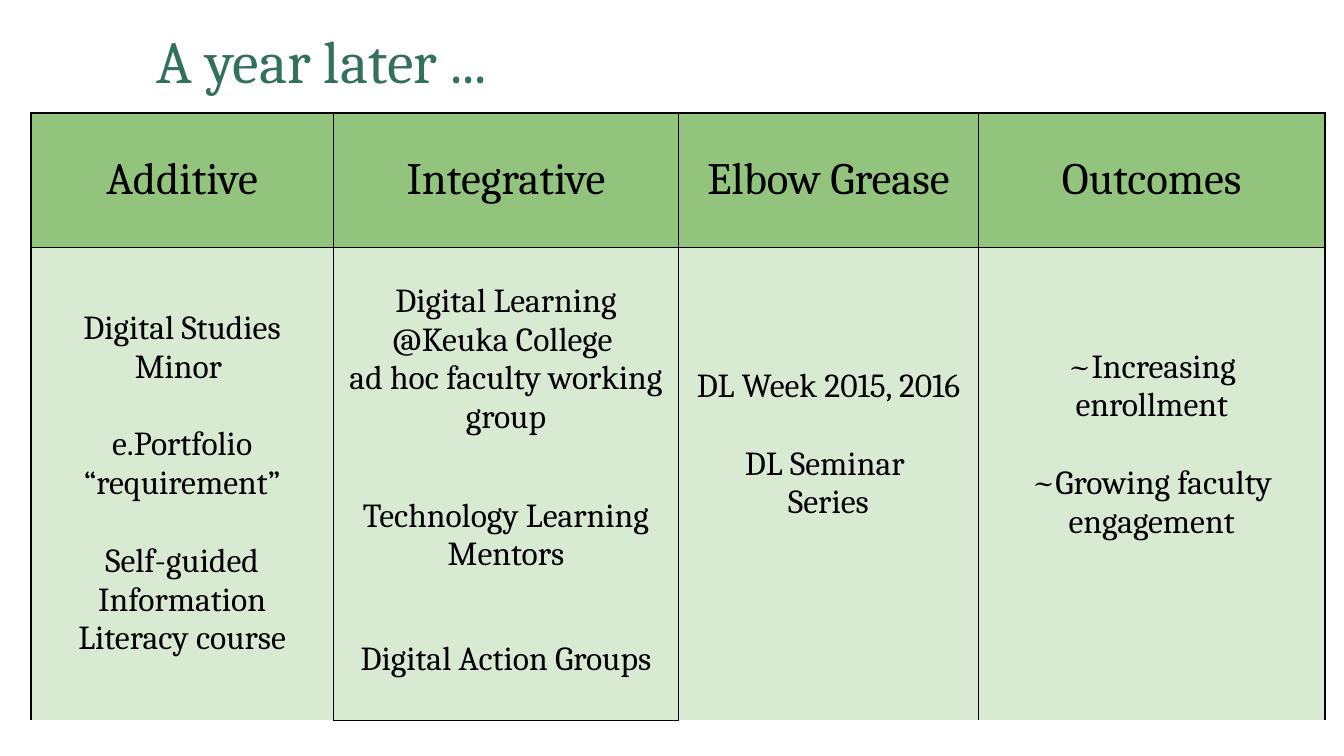
from lxml.etree import SubElement
from pptx import Presentation
from pptx.dml.color import RGBColor
from pptx.enum.text import MSO_ANCHOR, PP_ALIGN
from pptx.oxml.ns import qn
from pptx.util import Inches, Pt

FONT = "Cambria"
BLACK, TITLE_GREEN = "000000", "33715B"
HEADER_GREEN, BODY_GREEN = "93C47D", "D9EAD3"
MARGIN = 0.1
BLANK_LINE = 20.8  # points, one line of 18 point text

COLUMN_WIDTHS = [2.25, 2.57, 2.23, 2.58]
ROW_HEIGHTS = [1, 1.67, 0.95, 0.9]
LAST_ROW = len(ROW_HEIGHTS) - 1
HEADINGS = ["Additive", "Integrative", "Elbow Grease", "Outcomes"]

# Each cell is a list of groups, and each group a list of paragraphs.
INTEGRATIVE = [
    [["Digital Learning @Keuka College ", "ad hoc faculty working group"]],
    [["Technology Learning Mentors"]],
    [["Digital Action Groups"]],
]
# Column: (groups, bottom margin)
TALL_CELLS = {
    0: ([["Digital Studies Minor "], ["e.Portfolio “requirement”"],
         ["Self-guided Information Literacy course"]], MARGIN),
    2: ([["DL Week 2015, 2016"], ["DL Seminar ", "Series"]], 0.68),
    3: ([["~Increasing enrollment"], ["~Growing faculty engagement"]], 0.68),
}


def color(value):
    return RGBColor.from_string(value)


def write_groups(frame, groups, size, text_color):
    """Write centred paragraphs with one line of space between groups."""
    first = True
    for group in groups:
        for index, text in enumerate(group):
            paragraph = frame.paragraphs[0] if first else frame.add_paragraph()
            paragraph.alignment = PP_ALIGN.CENTER
            if index == 0 and not first:
                paragraph.space_before = Pt(BLANK_LINE)
            first = False
            run = paragraph.add_run()
            run.text = text
            run.font.name = FONT
            run.font.size = Pt(size)
            run.font.color.rgb = color(text_color)


def set_margins(target, bottom=MARGIN):
    target.margin_left = target.margin_right = target.margin_top = Inches(MARGIN)
    target.margin_bottom = Inches(bottom)


def add_title(slide, text):
    box = slide.shapes.add_textbox(Inches(0), Inches(0.08), Inches(4.79), Inches(0.76))
    frame = box.text_frame
    frame.word_wrap = True
    frame.vertical_anchor = MSO_ANCHOR.TOP
    set_margins(frame)
    write_groups(frame, [[text]], 32, TITLE_GREEN)


def style_cell(cell, fill, open_sides):
    """Fill the cell and draw its borders, except on the open sides."""
    properties = cell._tc.get_or_add_tcPr()
    for side in ("lnL", "lnR", "lnT", "lnB"):
        line = SubElement(properties, qn(f"a:{side}"), w=str(Pt(1)))
        if side in open_sides:
            SubElement(line, qn("a:noFill"))
        else:
            line_fill = SubElement(line, qn("a:solidFill"))
            SubElement(line_fill, qn("a:srgbClr"), val=BLACK)
    cell.fill.solid()
    cell.fill.fore_color.rgb = color(fill)
    cell.vertical_anchor = MSO_ANCHOR.MIDDLE
    set_margins(cell)


def add_table(slide):
    table = slide.shapes.add_table(
        len(ROW_HEIGHTS), len(COLUMN_WIDTHS), Inches(0.23), Inches(0.84),
        Inches(sum(COLUMN_WIDTHS)), Inches(sum(ROW_HEIGHTS))).table
    for column, width in zip(table.columns, COLUMN_WIDTHS):
        column.width = Inches(width)
    for index, (row, height) in enumerate(zip(table.rows, ROW_HEIGHTS)):
        row.height = Inches(height)
        open_sides = set()
        if index > 1:
            open_sides.add("lnT")
        if 0 < index < LAST_ROW:
            open_sides.add("lnB")
        for cell in row.cells:
            style_cell(cell, BODY_GREEN if index else HEADER_GREEN, open_sides)
    return table


def fill_table(table):
    for column, heading in enumerate(HEADINGS):
        write_groups(table.cell(0, column).text_frame, [[heading]], 24, BLACK)
    for row, groups in enumerate(INTEGRATIVE, start=1):
        write_groups(table.cell(row, 1).text_frame, groups, 18, BLACK)
    for column, (groups, bottom) in TALL_CELLS.items():
        cell = table.cell(1, column)
        cell.merge(table.cell(LAST_ROW, column))
        set_margins(cell, bottom)
        write_groups(cell.text_frame, groups, 18, BLACK)


def main():
    presentation = Presentation()
    presentation.slide_width = Inches(10)
    presentation.slide_height = Inches(10 * 9 / 16)
    slide = presentation.slides.add_slide(presentation.slide_layouts[6])
    add_title(slide, "A year later ...")
    fill_table(add_table(slide))
    presentation.save("out.pptx")


if __name__ == "__main__":
    main()
